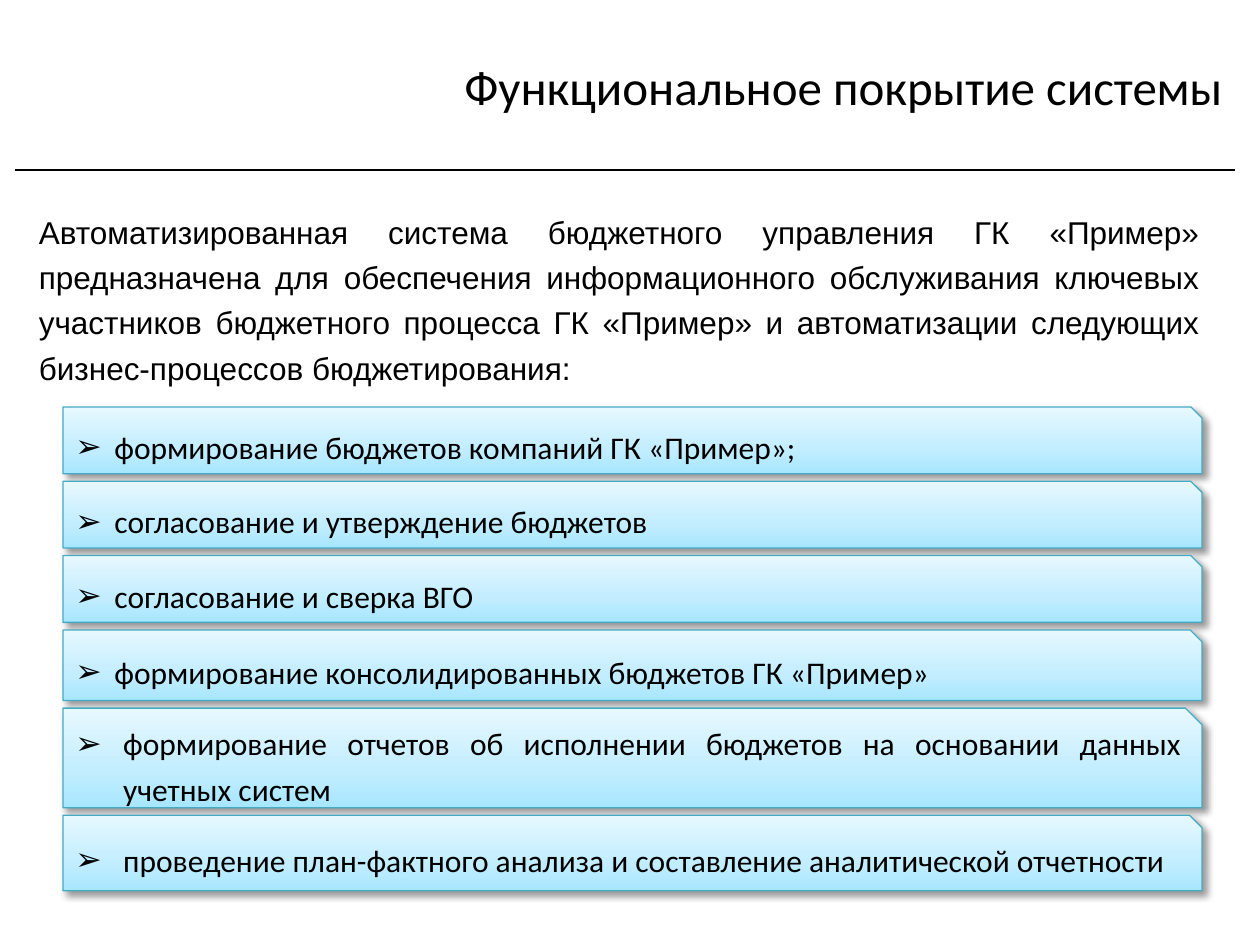
from copy import deepcopy

from lxml import etree
from pptx import Presentation
from pptx import util as u
from pptx.dml.color import RGBColor
from pptx.enum import shapes, text
from pptx.oxml.ns import qn

BLACK = RGBColor(0x00, 0x00, 0x00)
EDGE = RGBColor(0x46, 0xAA, 0xC5)
SHADES = [
    (0, RGBColor(0xA7, 0xE6, 0xFF)),
    (0.35, RGBColor(0xC1, 0xED, 0xFF)),
    (1, RGBColor(0xE7, 0xF8, 0xFF)),
]
INTRO = (
    "Автоматизированная система бюджетного управления ГК «Пример» "
    "предназначена для обеспечения информационного обслуживания ключевых "
    "участников бюджетного процесса ГК «Пример» и автоматизации следующих "
    "бизнес-процессов бюджетирования:"
)
TASKS = [
    ("формирование бюджетов компаний ГК «Пример»;", 0.53, 0.31),
    ("согласование и утверждение бюджетов", 0.53, 0.31),
    ("согласование и сверка ВГО", 0.53, 0.31),
    ("формирование консолидированных бюджетов ГК «Пример»", 0.56, 0.31),
    ("формирование отчетов об исполнении бюджетов на основании данных учетных систем", 0.79, 0.38),
    ("проведение план-фактного анализа и составление аналитической отчетности", 0.6, 0.38),
]
TOP, GAP = 3.23, 0.06


def add_node(parent, tag, **attrs):
    return etree.SubElement(parent, qn(tag), attrs)


def write(frame, words, size=18, face="Calibri", align=text.PP_ALIGN.JUSTIFY,
          anchor=text.MSO_ANCHOR.MIDDLE, space=None, after=None, indent=None):
    frame.word_wrap = True
    frame.vertical_anchor = anchor
    para = frame.paragraphs[0]
    para.text = words
    para.alignment = align
    para.line_spacing = space
    if after:
        para.space_after = u.Pt(after)
    if indent:
        props = para._p.get_or_add_pPr()
        props.set("marL", str(u.Inches(indent)))
        props.set("indent", str(-u.Inches(indent)))
        add_node(props, "a:buFont", typeface="Arial")
        add_node(props, "a:buChar", char="➢")
    font = para.runs[0].font
    font.size = u.Pt(size)
    font.name = face
    font.color.rgb = BLACK


class Deck:
    def __init__(self, show):
        self.slide = show.slides.add_slide(show.slide_layouts[5])

    def title(self, words, *place):
        head = self.slide.shapes.title
        head.left, head.top, head.width, head.height = map(u.Inches, place)
        write(head.text_frame, words, size=28, align=text.PP_ALIGN.RIGHT)

    def rule(self, left, right, top):
        line = self.slide.shapes.add_connector(
            shapes.MSO_CONNECTOR.STRAIGHT,
            u.Inches(left), u.Inches(top), u.Inches(right), u.Inches(top))
        line.line.color.rgb = BLACK
        line.line.width = u.Pt(0.75)
        add_node(line._element.spPr, "a:effectLst")

    def body(self, words, *place):
        box = self.slide.shapes.add_textbox(*map(u.Inches, place))
        write(box.text_frame, words, face="Arial", anchor=text.MSO_ANCHOR.TOP,
              space=1.2, after=8)

    def card(self, words, indent, *place):
        box = self.slide.shapes.add_shape(
            shapes.MSO_SHAPE.SNIP_1_RECTANGLE, *map(u.Inches, place))
        self.shade(box)
        box.line.color.rgb = EDGE
        box.line.width = u.Pt(0.75)
        self.shadow(box)
        write(box.text_frame, words, space=1.2, indent=indent)

    def shade(self, box):
        box.fill.gradient()
        box.fill.gradient_angle = 90
        stops = box._element.spPr.find(qn("a:gradFill")).find(qn("a:gsLst"))
        stops.append(deepcopy(stops[-1]))
        for stop, (spot, tint) in zip(box.fill.gradient_stops, SHADES):
            stop.position = spot
            stop.color.rgb = tint

    def shadow(self, box):
        box.shadow.inherit = False
        effects = box._element.spPr.find(qn("a:effectLst"))
        outer = add_node(effects, "a:outerShdw", blurRad=str(u.Pt(4)),
                         dist=str(u.Pt(3)), dir="2700000", algn="tl",
                         rotWithShape="0")
        tint = add_node(outer, "a:srgbClr", val=str(BLACK))
        add_node(tint, "a:alpha", val="40000")


def main():
    show = Presentation()
    show.slide_width, show.slide_height = u.Inches(10), u.Inches(7.5)
    deck = Deck(show)
    deck.rule(0.12, 9.8, 1.35)
    deck.title("Функциональное покрытие системы", 2.68, 0.1, 7.12, 1.16)
    deck.body(INTRO, 0.21, 1.58, 9.41, 1.56)
    top = TOP
    for words, height, indent in TASKS:
        deck.card(words, indent, 0.5, top, 9.04, height)
        top += height + GAP
    show.save("out.pptx")


if __name__ == "__main__":
    main()
